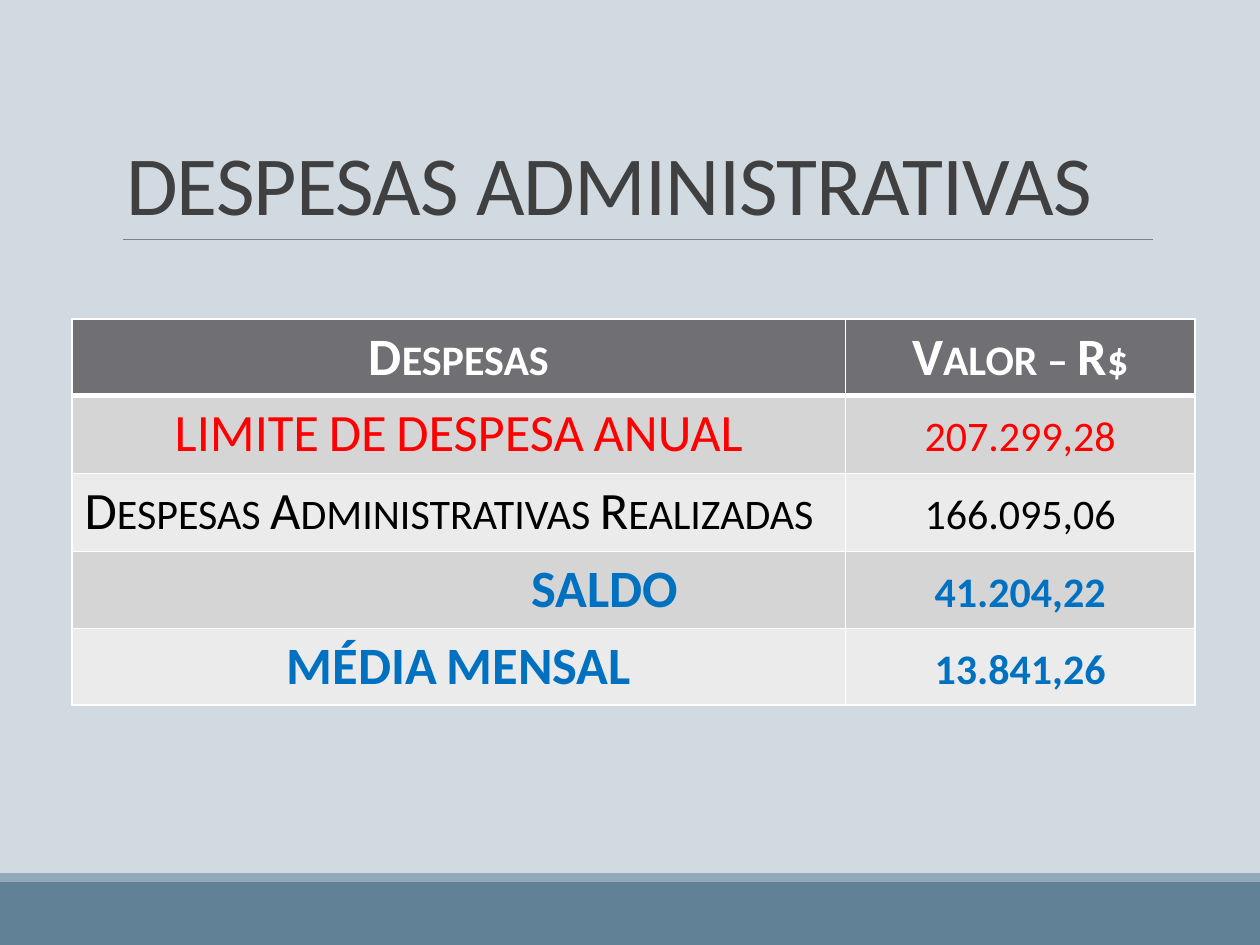
from lxml import etree
from pptx import Presentation
from pptx import util as u
from pptx.dml.color import RGBColor
from pptx.enum import shapes, text
from pptx.oxml import ns

BACKGROUND = RGBColor(0xD1, 0xD9, 0xE1)
BAND = RGBColor(0x61, 0x81, 0x97)
STRIP = RGBColor(0x92, 0xA9, 0xB9)
RULE = RGBColor(0x80, 0x80, 0x80)
TITLE = RGBColor(0x40, 0x40, 0x40)
HEADER = RGBColor(0x6F, 0x6F, 0x74)
DARK_ROW = RGBColor(0xD5, 0xD5, 0xD6)
LIGHT_ROW = RGBColor(0xEB, 0xEB, 0xEB)
WHITE = RGBColor(0xFF, 0xFF, 0xFF)
RED = RGBColor(0xFF, 0x00, 0x00)
BLACK = RGBColor(0x00, 0x00, 0x00)
BLUE = RGBColor(0x00, 0x70, 0xC0)
CENTER, JUSTIFY = text.PP_ALIGN.CENTER, text.PP_ALIGN.JUSTIFY


def add_run(p, words, size, color, bold=False):
    r = p.add_run()
    r.text = words
    r.font.name = "Calibri"
    r.font.size = u.Pt(size)
    r.font.bold = bold
    r.font.color.rgb = color
    return r


def set_borders(cell, bottom, top):
    tcPr = cell._tc.get_or_add_tcPr()
    for i, (side, width) in enumerate((("L", 1), ("R", 1), ("T", top), ("B", bottom))):
        ln = etree.Element(ns.qn("a:ln" + side), w=str(u.Pt(width)))
        fill = etree.SubElement(ln, ns.qn("a:solidFill"))
        etree.SubElement(fill, ns.qn("a:srgbClr"), val=str(WHITE))
        tcPr.insert(i, ln)


prs = Presentation()
prs.slide_width, prs.slide_height = u.Pt(720), u.Pt(540)
s = prs.slides.add_slide(prs.slide_layouts[5])
s.background.fill.solid()
s.background.fill.fore_color.rgb = BACKGROUND

for top, height, color in ((504, 36, BAND), (499, 5, STRIP)):
    sp = s.shapes.add_shape(shapes.MSO_SHAPE.RECTANGLE, 0, u.Pt(top), u.Pt(720), u.Pt(height))
    sp.shadow.inherit = False
    sp.fill.solid()
    sp.fill.fore_color.rgb = color
    sp.line.fill.background()

rule = s.shapes.add_connector(
    shapes.MSO_CONNECTOR.STRAIGHT, u.Pt(70.5), u.Pt(136.8), u.Pt(658.8), u.Pt(136.8))
rule.line.color.rgb = RULE
rule.line.width = u.Pt(0.5)
etree.SubElement(rule._element.spPr, ns.qn("a:effectLst"))

title = s.shapes.title
title.left, title.top, title.width, title.height = u.Pt(64.8), u.Pt(22.3), u.Pt(594), u.Pt(114.5)
tf = title.text_frame
tf.word_wrap = True
tf.auto_size = text.MSO_AUTO_SIZE.NONE
tf.vertical_anchor = text.MSO_ANCHOR.BOTTOM
p = tf.paragraphs[0]
p.alignment = text.PP_ALIGN.LEFT
p.line_spacing = 0.85
r = add_run(p, "DESPESAS ADMINISTRATIVAS", 48, TITLE)
r.font._element.set("spc", "-50")

rows = (
    ("Despesas", "Valor – R$", HEADER, WHITE, True, CENTER, 43.2),
    ("LIMITE DE DESPESA ANUAL", "207.299,28", DARK_ROW, RED, False, CENTER, 44.6),
    ("Despesas Administrativas Realizadas", "166.095,06", LIGHT_ROW, BLACK, False, JUSTIFY, 44.6),
    ("SALDO", "41.204,22", DARK_ROW, BLUE, True, CENTER, 43.6),
    ("MÉDIA MENSAL", "13.841,26", LIGHT_ROW, BLUE, True, CENTER, 43.6),
)
table = s.shapes.add_table(
    len(rows), 2, u.Pt(41.2), u.Pt(182.2), u.Pt(641.6), u.Pt(219.6)).table
table.columns[0].width, table.columns[1].width = u.Pt(442), u.Pt(199.6)

for i, (label, value, fill, color, bold, align, height) in enumerate(rows):
    table.rows[i].height = u.Pt(height)
    for j, words in enumerate((label, value)):
        cell = table.cell(i, j)
        cell.fill.solid()
        cell.fill.fore_color.rgb = fill
        set_borders(cell, bottom=3 if i == 0 else 1, top=3 if i == 1 else 1)
        p = cell.text_frame.paragraphs[0]
        p.alignment = align if j == 0 else CENTER
        r = add_run(p, words, 30, color, bold)
        r.font._element.set("cap", "small")
        if words == "SALDO":
            p._p.get_or_add_pPr().set("marL", str(u.Pt(83)))

prs.save("out.pptx")
